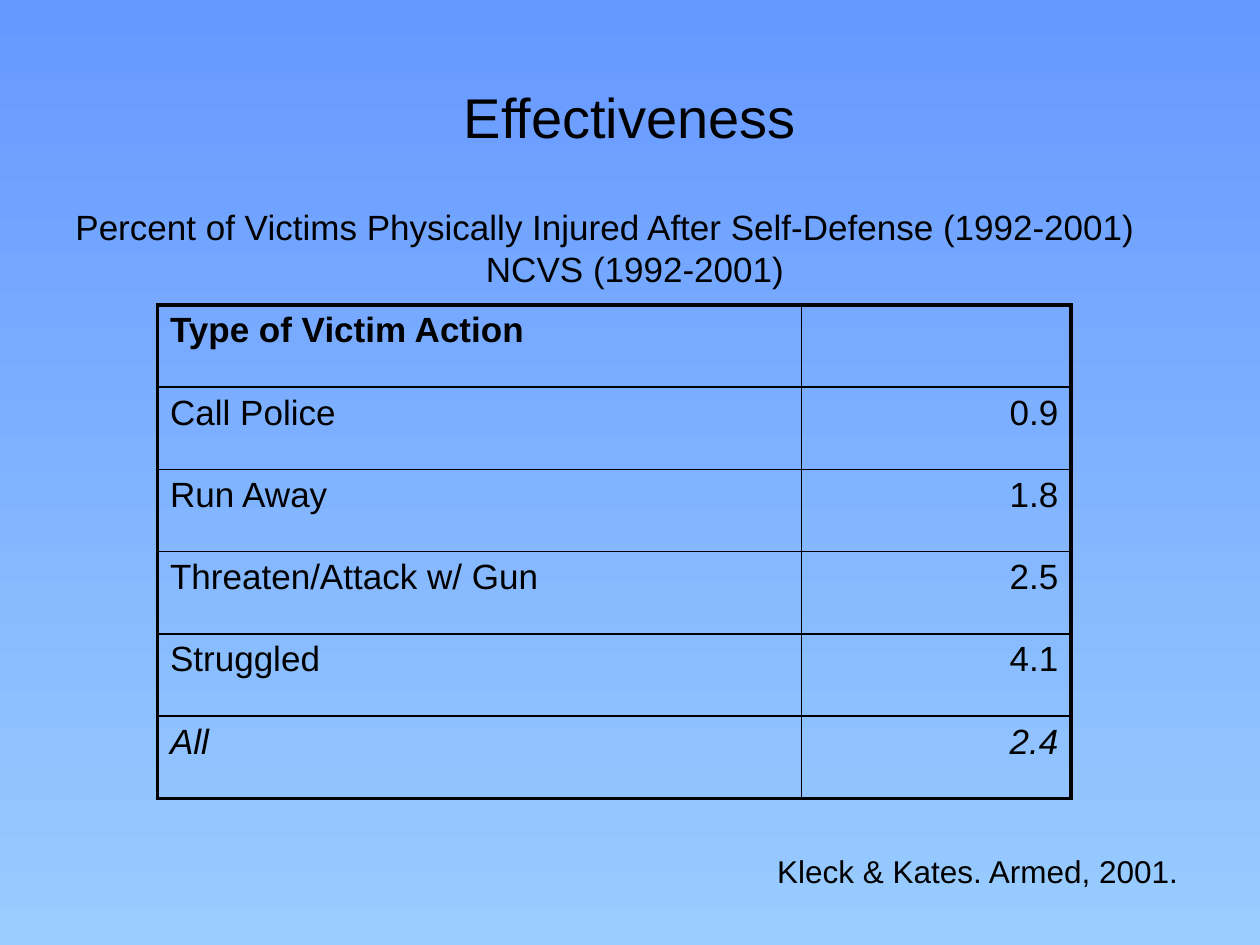
from lxml.etree import SubElement
from pptx import Presentation
from pptx.dml.color import RGBColor
from pptx.enum.text import MSO_ANCHOR, MSO_AUTO_SIZE, PP_ALIGN
from pptx.oxml.ns import qn
from pptx.util import Inches, Pt

BLACK = RGBColor(0x00, 0x00, 0x00)
SKY_TOP = RGBColor(0x66, 0x99, 0xFF)
SKY_BOTTOM = RGBColor(0x99, 0xCC, 0xFF)

VICTIM_ACTIONS = [
    ("Type of Victim Action", ""),
    ("Call Police", "0.9"),
    ("Run Away", "1.8"),
    ("Threaten/Attack w/ Gun", "2.5"),
    ("Struggled", "4.1"),
    ("All", "2.4"),
]


class SlideBuilder:
    font_name = "Arial"
    outer_line = Pt(2.25)
    inner_line = Pt(1)

    def __init__(self, presentation):
        self.slide = presentation.slides.add_slide(presentation.slide_layouts[5])

    def background(self, top, bottom):
        fill = self.slide.background.fill
        fill.gradient()
        fill.gradient_angle = 270
        for stop, color, position in zip(fill.gradient_stops, (top, bottom), (0, 1)):
            stop.color.rgb = color
            stop.position = position

    def format_text(self, text_frame, size, align=PP_ALIGN.LEFT, bold=False, italic=False):
        for paragraph in text_frame.paragraphs:
            paragraph.alignment = align
            for run in paragraph.runs:
                font = run.font
                font.name, font.size = self.font_name, Pt(size)
                font.bold, font.italic = bold, italic
                font.color.rgb = BLACK

    def title(self, text, left, top, width, height):
        title = self.slide.shapes.title
        title.left, title.top = Inches(left), Inches(top)
        title.width, title.height = Inches(width), Inches(height)
        title.text_frame.text = text
        title.text_frame.vertical_anchor = MSO_ANCHOR.MIDDLE
        self.format_text(title.text_frame, 32, PP_ALIGN.CENTER)

    def text_box(self, text, left, top, width, height, size, wrap=True):
        box = self.slide.shapes.add_textbox(
            Inches(left), Inches(top), Inches(width), Inches(height))
        text_frame = box.text_frame
        text_frame.text = text
        text_frame.word_wrap = wrap
        text_frame.auto_size = MSO_AUTO_SIZE.SHAPE_TO_FIT_TEXT
        self.format_text(text_frame, size)
        return text_frame

    def cell_borders(self, cell, outer_edges):
        """Draw all four borders, heavier on the edges flagged as outer."""
        properties = cell._tc.get_or_add_tcPr()
        for side, is_outer in zip("LRTB", outer_edges):
            width = self.outer_line if is_outer else self.inner_line
            line = SubElement(properties, qn(f"a:ln{side}"), w=str(int(width)))
            fill = SubElement(line, qn("a:solidFill"))
            SubElement(fill, qn("a:srgbClr"), val=str(BLACK))

    def table(self, rows, left, top, column_widths, row_height):
        last_row, last_column = len(rows) - 1, len(column_widths) - 1
        table = self.slide.shapes.add_table(
            len(rows), len(column_widths), Inches(left), Inches(top),
            Inches(sum(column_widths)), Inches(row_height * len(rows))).table
        table.first_row = table.horz_banding = False
        for column, width in zip(table.columns, column_widths):
            column.width = Inches(width)
        for row_index, values in enumerate(rows):
            table.rows[row_index].height = Inches(row_height)
            for column_index, value in enumerate(values):
                cell = table.cell(row_index, column_index)
                cell.text_frame.text = value
                align = PP_ALIGN.RIGHT if column_index else PP_ALIGN.LEFT
                self.format_text(cell.text_frame, 20, align,
                                 bold=row_index == 0, italic=row_index == last_row)
                self.cell_borders(cell, (column_index == 0, column_index == last_column,
                                         row_index == 0, row_index == last_row))
                cell.fill.background()


def main():
    presentation = Presentation()
    presentation.slide_width, presentation.slide_height = Inches(10), Inches(7.5)
    builder = SlideBuilder(presentation)
    builder.background(SKY_TOP, SKY_BOTTOM)
    builder.title("Effectiveness", 0.5, 0.3, 9, 1.25)
    builder.table(VICTIM_ACTIONS, 1.25, 2.42, (5.11, 2.14), 0.653)
    heading = builder.text_box(
        "Percent of Victims Physically Injured After Self-Defense (1992-2001)\n"
        "NCVS (1992-2001)", 0.5, 1.58, 9.08, 0.77, 20)
    heading.paragraphs[1].alignment = PP_ALIGN.CENTER
    builder.text_box("Kleck & Kates. Armed, 2001.", 6.07, 6.71, 3.4, 0.4, 18, wrap=False)
    presentation.save("out.pptx")


if __name__ == "__main__":
    main()
